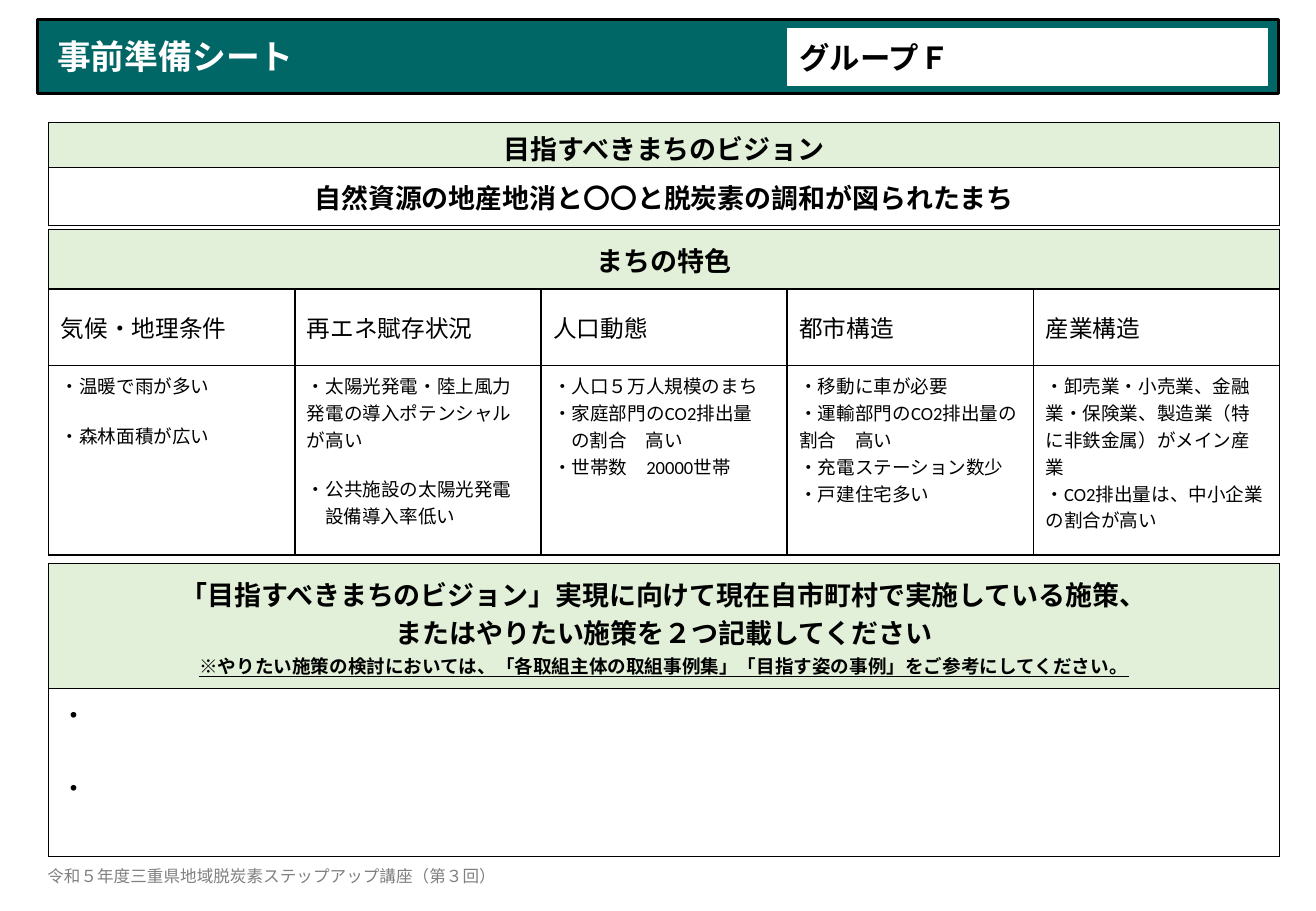
import pptx
import pptx.util
import pptx.dml.color
import pptx.enum.shapes
import pptx.enum.text
import pptx.oxml

Inches = pptx.util.Inches
Pt = pptx.util.Pt
Align = pptx.enum.text.PP_ALIGN
Anchor = pptx.enum.text.MSO_ANCHOR

THEME = {
    "teal": "006666", "green": "E2F0D9", "white": "FFFFFF", "black": "000000", "gray": "808080",
    "title": 20, "group": 18, "heading": 16, "label": 14, "body": 11, "footer": 9.8,
    "font": "Calibri", "heading_font": "Arial", "footer_font": "Noto Sans CJK JP",
}
LEFT, WIDTH = 0.4, 10.13


def color(name):
    return pptx.dml.color.RGBColor.from_string(THEME[name])


def write(frame, lines, size, ink="black", font="font", bold=False, anchor=Anchor.MIDDLE, **para_format):
    """Each line is a string, or a dict of its text or spans, own formats and indent."""
    frame.word_wrap = True
    frame.vertical_anchor = anchor
    for number, line in enumerate(lines):
        line = {"text": line} if isinstance(line, str) else line
        para = frame.paragraphs[0] if number == 0 else frame.add_paragraph()
        for name, value in {"alignment": Align.LEFT, **para_format, **line.get("para", {})}.items():
            setattr(para, name, value)
        if "indent" in line:
            para._p.get_or_add_pPr().set("marL", str(Inches(line["indent"])))
        for text, face in line.get("spans") or [(line["text"], font)]:
            span = para.add_run()
            span.text = text
            span.font.color.rgb = color(ink)
            formats = {"name": THEME[face], "size": Pt(THEME[size]), "bold": bold}
            for name, value in {**formats, **line.get("font", {})}.items():
                setattr(span.font, name, value)


deck = pptx.Presentation()
deck.slide_width, deck.slide_height = Inches(10.83), Inches(7.5)
page = deck.slides.add_slide(deck.slide_layouts[6])

# Title bar, group name and footer
for text, place, fill, line, width, size, ink, inset in [
    ("事前準備シート", (0.31, 0.16, 10.21, 0.61), "teal", "black", 1.5, "title", "white", 0.16),
    ("グループＦ", (6.48, 0.24, 3.95, 0.46), "white", "white", 1, "group", "black", 0.1),
]:
    box = page.shapes.add_shape(pptx.enum.shapes.MSO_SHAPE.RECTANGLE, *map(Inches, place))
    box.shadow.inherit = False
    box.fill.solid()
    box.fill.fore_color.rgb = color(fill)
    box.line.color.rgb = color(line)
    box.line.width = Pt(width)
    box.text_frame.margin_left = Inches(inset)
    write(box.text_frame, [text], size, ink, bold=True)

footer = page.shapes.add_textbox(*map(Inches, (0.31, 7.04, 4.14, 0.37))).text_frame
for side in ("left", "right", "top", "bottom"):
    setattr(footer, "margin_" + side, Inches(0.08 if side in ("left", "right") else 0.04))
write(footer, ["令和５年度三重県地域脱炭素ステップアップ講座（第３回）"], "footer", "gray", "footer_font",
      line_spacing=0.9)

# Cell looks and contents
heading = {"size": "heading", "bold": True, "alignment": Align.CENTER}
label = {"size": "label"}
body = {"size": "body", "anchor": Anchor.TOP}
answer = {"size": "heading", "anchor": Anchor.TOP}
gap = {"space_before": Pt(13.5)}

features = {
    "気候・地理条件": ["・温暖で雨が多い", {"text": "・森林面積が広い", "para": gap}],
    "再エネ賦存状況": ["・太陽光発電・陸上風力発電の導入ポテンシャルが高い",
                {"text": "・公共施設の太陽光発電", "para": gap},
                {"text": "設備導入率低い", "indent": 0.15}],
    "人口動態": ["・人口５万人規模のまち", "・家庭部門のCO2排出量",
             {"text": "の割合　高い", "indent": 0.15}, "・世帯数　20000世帯"],
    "都市構造": ["・移動に車が必要", "・運輸部門のCO2排出量の割合　高い",
             "・充電ステーション数少", "・戸建住宅多い"],
    "産業構造": ["・卸売業・小売業、金融業・保険業、製造業（特に非鉄金属）がメイン産業",
             "・CO2排出量は、中小企業の割合が高い"],
}
request = [
    {"spans": [("「目指すべきまちのビジョン」実現に向けて現在自市町村で実施している施策、", "heading_font")]},
    {"spans": [("または", "heading_font"), ("やりたい施策を２つ記載してください", "font")]},
    {"text": "※やりたい施策の検討においては、「各取組主体の取組事例集」「目指す姿の事例」をご参考にしてください。",
     "font": {"size": Pt(THEME["body"]), "underline": True}},
]
measures = ["・", {"text": "・", "para": {"space_before": Pt(20)}}]

# Each table: top, then rows of (height, look, cell contents)
tables = [
    (1.89, [(0.49, heading, [["まちの特色"]]),
            (0.63, label, [[name] for name in features]),
            (1.56, body, list(features.values()))]),
    (1.01, [(0.34, heading, [["目指すべきまちのビジョン"]]),
            (0.48, heading, [["自然資源の地産地消と〇〇と脱炭素の調和が図られたまち"]])]),
    (4.64, [(1.03, heading, [request]),
            (1.38, answer, [measures])]),
]
for top, rows in tables:
    columns = max(len(contents) for _, _, contents in rows)
    height = sum(row[0] for row in rows)
    grid = page.shapes.add_table(len(rows), columns, Inches(LEFT), Inches(top),
                                 Inches(WIDTH), Inches(height)).table
    grid.first_row = grid.horz_banding = False
    for row_number, (row_height, look, contents) in enumerate(rows):
        grid.rows[row_number].height = Inches(row_height)
        if len(contents) < columns:
            grid.cell(row_number, 0).merge(grid.cell(row_number, columns - 1))
        for column in range(columns):
            cell = grid.cell(row_number, column)
            properties = cell._tc.get_or_add_tcPr()
            for edge in "LRTB":
                properties.append(pptx.oxml.parse_xml(
                    f'<a:ln{edge} xmlns:a="http://schemas.openxmlformats.org/drawingml/2006/main" w="{Pt(1)}">'
                    f'<a:solidFill><a:srgbClr val="{THEME["black"]}"/></a:solidFill></a:ln{edge}>'))
            if row_number == 0:
                cell.fill.solid()
                cell.fill.fore_color.rgb = color("green")
            else:
                cell.fill.background()
            if column < len(contents):
                cell.vertical_anchor = look.get("anchor", Anchor.MIDDLE)
                write(cell.text_frame, contents[column], **look)

deck.save("out.pptx")
